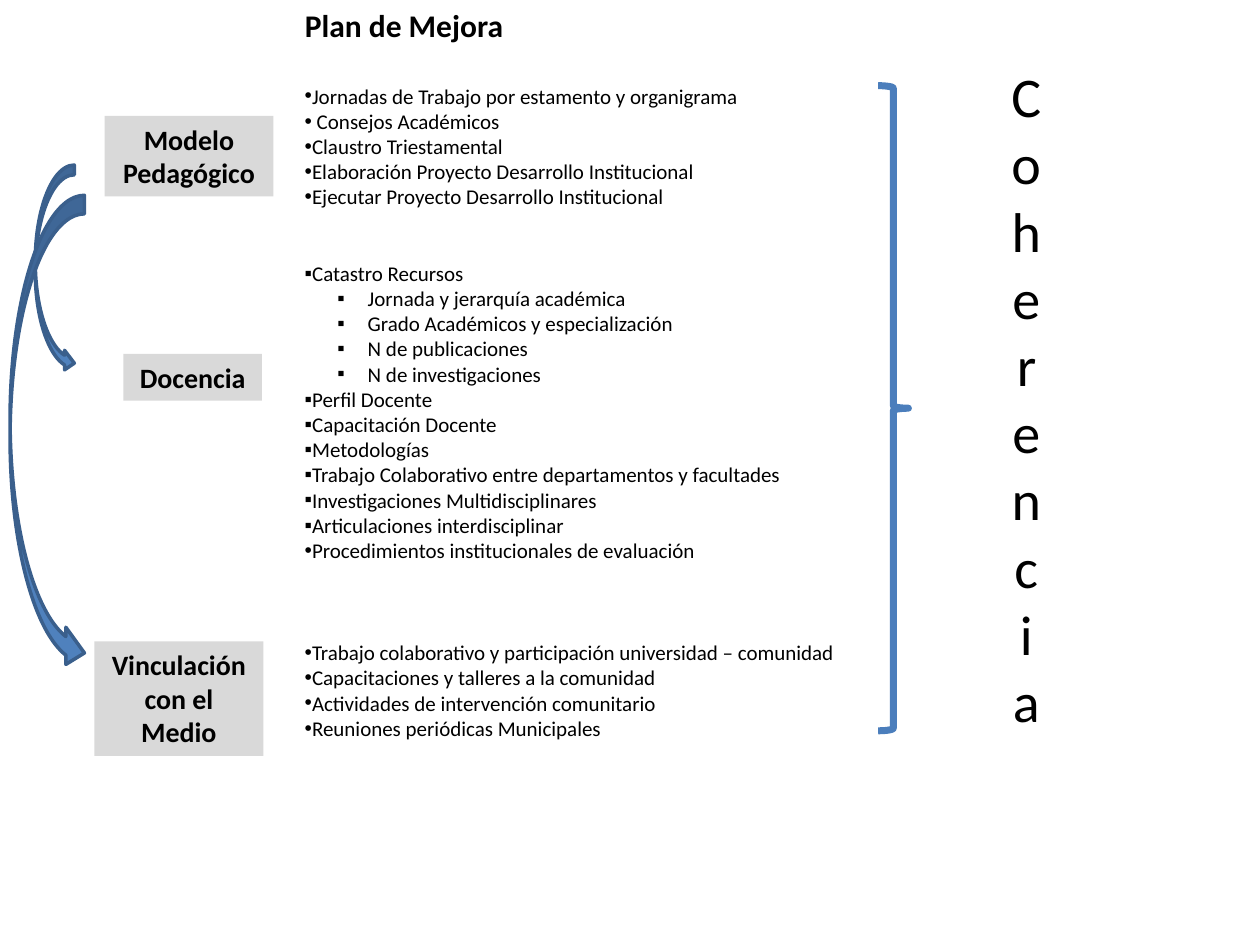
from lxml import etree
from pptx import Presentation
from pptx.dml.color import RGBColor
from pptx.enum.shapes import MSO_SHAPE
from pptx.enum.text import MSO_ANCHOR, PP_ALIGN
from pptx.oxml.ns import qn
from pptx.util import Inches, Pt

RECTANGLE = MSO_SHAPE.RECTANGLE
BRACE = MSO_SHAPE.RIGHT_BRACE
CURVED_ARROW = MSO_SHAPE.CURVED_RIGHT_ARROW
LEFT, CENTER = PP_ALIGN.LEFT, PP_ALIGN.CENTER
TOP = MSO_ANCHOR.TOP

COLORS = {"text": "000000", "area": "D9D9D9", "brace": "4B7EBC",
          "arrow": "4F81BD", "arrow_line": "3A5F8C"}
FONT = "Calibri"
LINE_HEIGHT = 14.65  # points, one line of 12 pt text

TITLE = "Plan de Mejora"
DOT, SQUARE = "•", "▪"
# Each group: blank lines above it, then (bullet, level, text)
GROUPS = [
    (0, [
        (DOT, 0, "Jornadas de Trabajo por estamento y organigrama"),
        (DOT, 0, " Consejos Académicos"),
        (DOT, 0, "Claustro Triestamental"),
        (DOT, 0, "Elaboración Proyecto Desarrollo Institucional"),
        (DOT, 0, "Ejecutar Proyecto Desarrollo Institucional"),
    ]),
    (2, [
        (SQUARE, 0, "Catastro Recursos"),
        (SQUARE, 1, "Jornada y jerarquía académica"),
        (SQUARE, 1, "Grado Académicos y especialización"),
        (SQUARE, 1, "N de publicaciones"),
        (SQUARE, 1, "N de investigaciones"),
        (SQUARE, 0, "Perfil Docente"),
        (SQUARE, 0, "Capacitación Docente"),
        (SQUARE, 0, "Metodologías"),
        (SQUARE, 0, "Trabajo Colaborativo entre departamentos y facultades"),
        (SQUARE, 0, "Investigaciones Multidisciplinares"),
        (SQUARE, 0, "Articulaciones interdisciplinar"),
        (DOT, 0, "Procedimientos institucionales de evaluación"),
    ]),
    (3, [
        (DOT, 0, "Trabajo colaborativo y participación universidad – comunidad"),
        (DOT, 0, "Capacitaciones y talleres a la comunidad"),
        (DOT, 0, "Actividades de intervención comunitario"),
        (DOT, 0, "Reuniones periódicas Municipales"),
    ]),
]
# Text, then left, top, width, height
AREAS = [
    ("Modelo Pedagógico", (0.83, 0.92, 1.34, 0.64)),
    ("Docencia", (0.98, 2.81, 1.1, 0.37)),
    ("Vinculación con el Medio", (0.75, 5.09, 1.34, 0.91)),
]
ARROWS = [(0.28, 1.31, 0.31, 1.65), (0.08, 1.55, 0.59, 3.78)]


def color(name):
    return RGBColor.from_string(COLORS[name])


def inches(bounds):
    return [Inches(value) for value in bounds]


def style(para, size, bold=False, align=LEFT):
    para.alignment = align
    para.font.name = FONT
    para.font.size = Pt(size)
    para.font.bold = bold
    para.font.color.rgb = color("text")


def write(shape, text, size, bold=False, align=CENTER):
    frame = shape.text_frame
    frame.word_wrap = True
    frame.vertical_anchor = TOP
    frame.text = text
    style(frame.paragraphs[0], size, bold, align)


def add_bullet(para, mark, level):
    """Put the bullet right before the text, or hanging on the second level."""
    properties = para._p.get_or_add_pPr()
    properties.set("marL", str(Inches(0.5 * level)))
    properties.set("indent", str(Inches(-0.24 * level)))
    font = etree.SubElement(properties, qn("a:buFont"))
    font.set("typeface", "Arial")
    etree.SubElement(properties, qn("a:buChar")).set("char", mark)


def add_shape(page, kind, bounds, fill=None, line=None, width=0):
    shape = page.shapes.add_shape(kind, *inches(bounds))
    shape.shadow.inherit = False
    if fill:
        shape.fill.solid()
        shape.fill.fore_color.rgb = color(fill)
    else:
        shape.fill.background()
    if line:
        shape.line.color.rgb = color(line)
        shape.line.width = Pt(width)
    else:
        shape.line.fill.background()
    return shape


def add_plan(page):
    box = page.shapes.add_textbox(*inches((2.32, 0.61, 4.72, 5.35)))
    frame = box.text_frame
    frame.word_wrap = True
    para = frame.paragraphs[0]
    for blank_lines, items in GROUPS:
        for index, (mark, level, text) in enumerate(items):
            if para.text:
                para = frame.add_paragraph()
            para.text = text
            para.level = level
            style(para, 12)
            if index == 0 and blank_lines:
                para.space_before = Pt(blank_lines * LINE_HEIGHT)
            add_bullet(para, mark, level)


def main():
    deck = Presentation()
    deck.slide_width, deck.slide_height = Inches(10), Inches(7.5)
    page = deck.slides.add_slide(deck.slide_layouts[5])

    title = page.shapes.title
    title.left, title.top, title.width, title.height = inches((2.32, 0, 4.72, 0.4))
    write(title, TITLE, 18, True, LEFT)
    add_plan(page)

    for text, bounds in AREAS:
        write(add_shape(page, RECTANGLE, bounds, "area"), text, 16, True)

    add_shape(page, BRACE, (6.97, 0.68, 0.24, 5.12), line="brace", width=4)
    # The box is one letter wide, so the word runs downwards
    word = page.shapes.add_textbox(*inches((7.91, 0.44, 0.47, 5.49)))
    write(word, "Coherencia", 32)

    for bounds in ARROWS:
        add_shape(page, CURVED_ARROW, bounds, "arrow", "arrow_line", 2)

    deck.save("out.pptx")


if __name__ == "__main__":
    main()
